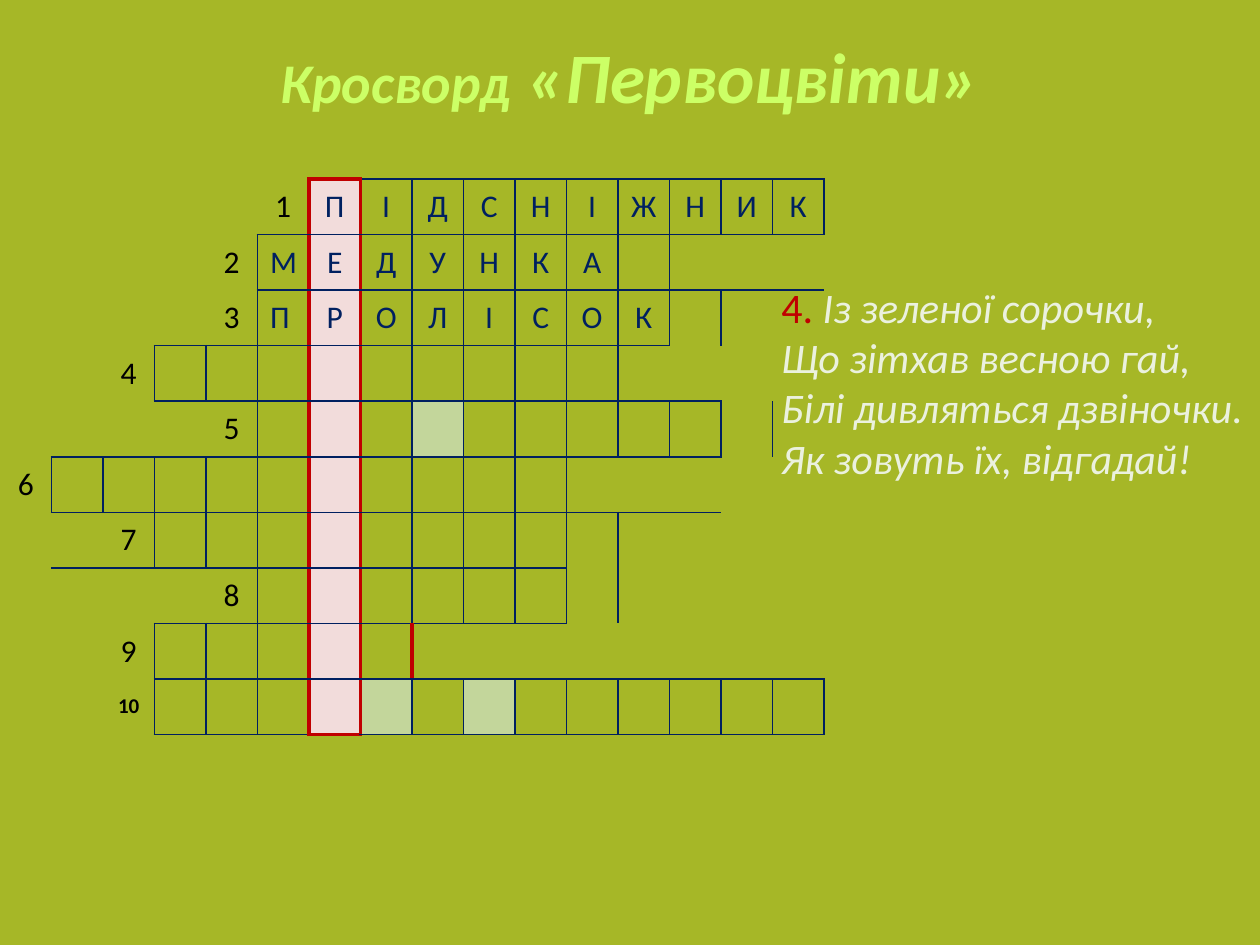
from pptx import Presentation
from pptx.dml.color import RGBColor
from pptx.enum.text import MSO_ANCHOR as ANCHOR, MSO_AUTO_SIZE as FIT, PP_ALIGN as ALIGN
from pptx.oxml.ns import qn
from pptx.util import Emu, Pt
from lxml.etree import SubElement

FONT = "Calibri"
OLIVE = RGBColor(0xA6, 0xB7, 0x27)
LIME = RGBColor(0xCC, 0xFF, 0x66)
CREAM = RGBColor(0xEB, 0xF1, 0xDE)
NAVY = RGBColor(0x00, 0x20, 0x60)
RED = RGBColor(0xC0, 0x00, 0x00)
PINK = RGBColor(0xF2, 0xDC, 0xDB)
GREEN = RGBColor(0xC3, 0xD6, 0x9B)
BLACK = RGBColor(0x00, 0x00, 0x00)

NO_GRID_STYLE = "{2D5ABB26-0587-4C30-8999-92F81FD0307C}"
SIDES = ("lnL", "lnR", "lnT", "lnB")
COLS, KEY_COL = 16, 6

# First column, last column and known letters of each answer
ANSWERS = [
    (6, 15, "ПІДСНІЖНИК"),
    (5, 12, "МЕДУНКА"),
    (5, 12, "ПРОЛІСОК"),
    (3, 11, ""),
    (5, 13, ""),
    (1, 10, ""),
    (3, 10, ""),
    (5, 10, ""),
    (3, 7, ""),
    (3, 15, ""),
]
GREEN_CELLS = [(4, 8), (9, 7), (9, 9)]

# Loose lines outside the answers: row, columns, side
LOOSE_LINES = [
    (1, (13, 14, 15), "lnB"),
    (2, (13,), "lnR"),
    (4, (14,), "lnR"),
    (5, (11, 12, 13), "lnB"),
    (6, (1, 2), "lnB"),
    (6, (11,), "lnR"),
    (7, (11,), "lnR"),
]
CLUE = [
    "Із зеленої сорочки,",
    "Що зітхав весною гай,",
    "Білі дивляться дзвіночки.",
    "Як зовуть їх, відгадай!",
]


def px(n):
    return Emu(round(n * 914400 / 126))


def place(sp, box):
    sp.left, sp.top, sp.width, sp.height = map(px, box)


def style(font, size, color, bold=False, italic=False):
    font.name, font.size, font.bold, font.italic = FONT, Pt(size), bold, italic
    font.color.rgb = color


def set_borders(cell, borders):
    """Draw the borders given as side -> (colour, points)."""
    tc_pr = cell._tc.get_or_add_tcPr()
    for side in SIDES:
        if side in borders:
            color, width = borders[side]
            ln = SubElement(tc_pr, qn(f"a:{side}"), w=str(Pt(width)))
            fill = SubElement(ln, qn("a:solidFill"))
            SubElement(fill, qn("a:srgbClr"), val=str(color))


def answer_borders(row, col):
    thin, thick = (NAVY, 1), (RED, 2.25)
    borders = dict.fromkeys(SIDES, thin)
    if col in (KEY_COL, KEY_COL + 1):
        borders["lnL"] = thick
    if col in (KEY_COL - 1, KEY_COL) or (row, col) == (8, 7):
        borders["lnR"] = thick
    if col == KEY_COL and row == 0:
        borders["lnT"] = thick
    if col == KEY_COL and row == len(ANSWERS) - 1:
        borders["lnB"] = thick
    return borders


def write_cell(cell, text, color, size=18, bold=False, align=ALIGN.CENTER):
    cell.vertical_anchor = ANCHOR.MIDDLE
    p = cell.text_frame.paragraphs[0]
    p.text, p.alignment = text, align
    style(p.font, size, color, bold)


def add_crossword(slide, box):
    rows = len(ANSWERS)
    frame = slide.shapes.add_table(rows, COLS, *map(px, box))
    table = frame.table
    table.first_row = table.horz_banding = False
    table._tbl.tblPr.find(qn("a:tableStyleId")).text = NO_GRID_STYLE
    for column in table.columns:
        column.width = px(box[2] / COLS)
    for row in table.rows:
        row.height = px(box[3] / rows)

    for row, (first, last, letters) in enumerate(ANSWERS):
        # Number in front of the answer
        two_digits = row >= 9
        write_cell(table.cell(row, first - 1), str(row + 1), BLACK,
                   12 if two_digits else 18, two_digits)
        # Boxes of the answer
        for col in range(first, last + 1):
            cell = table.cell(row, col)
            set_borders(cell, answer_borders(row, col))
            if col == KEY_COL or (row, col) in GREEN_CELLS:
                cell.fill.solid()
                cell.fill.fore_color.rgb = PINK if col == KEY_COL else GREEN
        for col, letter in enumerate(letters, first):
            align = ALIGN.LEFT if (row, col) == (2, 5) else ALIGN.CENTER
            write_cell(table.cell(row, col), letter, NAVY, align=align)

    for row, cols, side in LOOSE_LINES:
        for col in cols:
            set_borders(table.cell(row, col), {side: (NAVY, 1)})


def add_title(slide, box):
    sp = slide.shapes.title
    place(sp, box)
    tf = sp.text_frame
    tf.auto_size, tf.vertical_anchor = FIT.NONE, ANCHOR.TOP
    p = tf.paragraphs[0]
    p.alignment = ALIGN.CENTER
    for text, size in (("Кросворд", 32), (" «Первоцвіти»", 40.5)):
        r = p.add_run()
        r.text = text
        style(r.font, size, LIME, bold=True, italic=True)


def add_clue(slide, box):
    tf = slide.shapes.add_textbox(*map(px, box)).text_frame
    tf.word_wrap, tf.auto_size = False, FIT.SHAPE_TO_FIT_TEXT
    for i, line in enumerate(CLUE):
        p = tf.add_paragraph() if i else tf.paragraphs[0]
        if i == 0:
            number = p.add_run()
            number.text = "4. "
            style(number.font, 24, RED)
        r = p.add_run()
        r.text = line
        style(r.font, 24, CREAM, italic=True)


def main():
    prs = Presentation()
    prs.slide_width, prs.slide_height = px(1260), px(945)
    slide = prs.slides.add_slide(prs.slide_layouts[5])
    slide.background.fill.solid()
    slide.background.fill.fore_color.rgb = OLIVE
    add_crossword(slide, (0, 179, 824, 556))
    add_title(slide, (63, 26, 1134, 158))
    add_clue(slide, (769, 275, 491, 217))
    prs.save("out.pptx")


if __name__ == "__main__":
    main()
